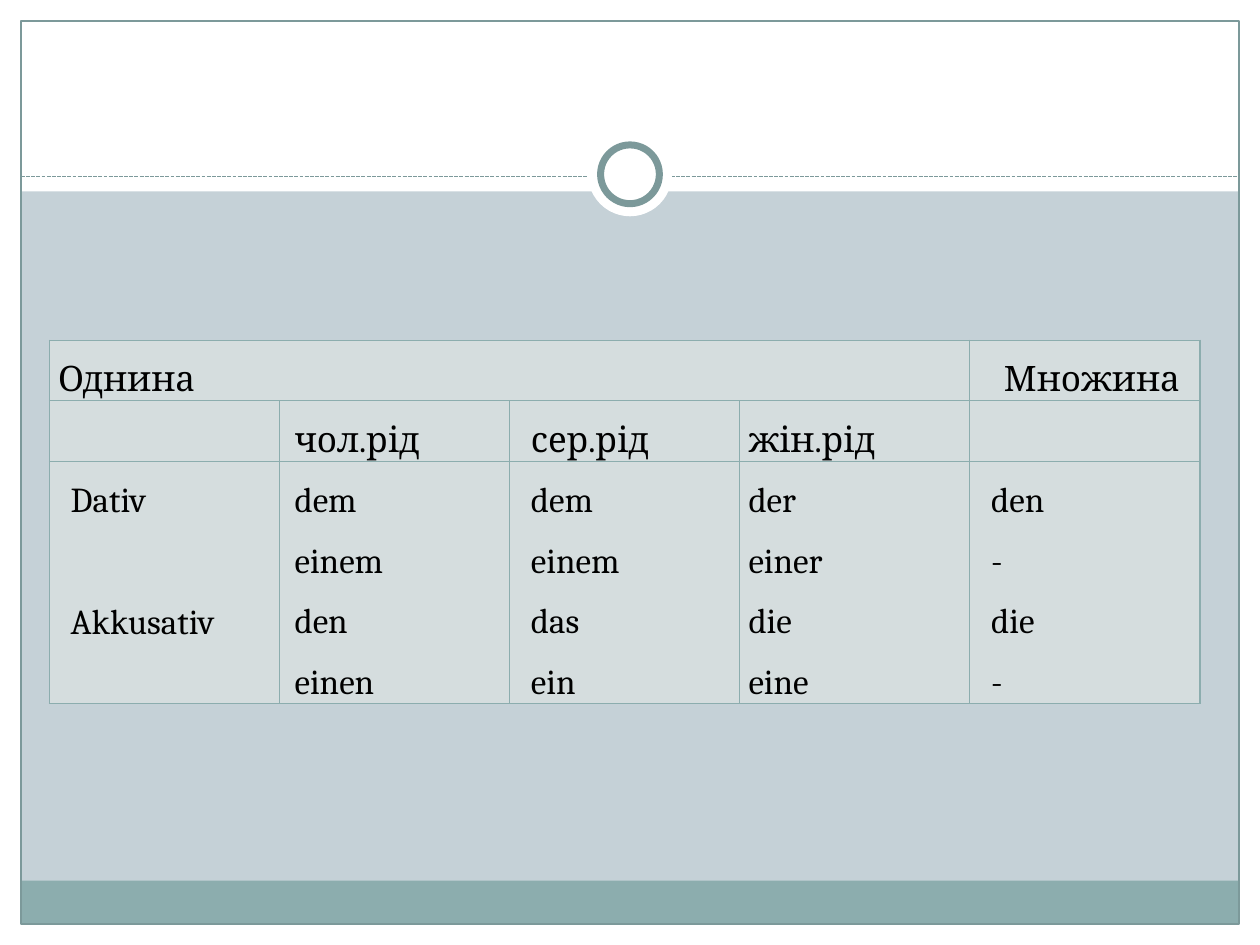
from lxml.etree import SubElement
from pptx import Presentation
from pptx.dml.color import RGBColor
from pptx.enum.dml import MSO_LINE
from pptx.enum.shapes import MSO_CONNECTOR, MSO_SHAPE
from pptx.enum.text import PP_ALIGN
from pptx.oxml import parse_xml
from pptx.oxml.ns import nsdecls, qn
from pptx.util import Inches, Pt

GRID_COLUMNS, GRID_ROWS = 60, 45
WHITE, TEAL, DARK_TEAL = "FFFFFF", "8CADAE", "7C999A"
BACKDROP, CELL, INK = "C5D1D7", "D5DDDE", "000000"
LINE_PITCH = 34.8


def color(value):
    return RGBColor.from_string(value)


class SlideBuilder:
    """Holds the style and the slide, measured on a 60 by 45 grid."""

    font_name = "Cambria"
    font_size = Pt(20)

    def __init__(self, presentation):
        self.width = presentation.slide_width
        self.height = presentation.slide_height
        self.slide = presentation.slides.add_slide(presentation.slide_layouts[6])

    def x(self, columns):
        return round(self.width * columns / GRID_COLUMNS)

    def y(self, rows):
        return round(self.height * rows / GRID_ROWS)

    def background(self, fill):
        self.slide.background.fill.solid()
        self.slide.background.fill.fore_color.rgb = color(fill)

    def shape(self, kind, left, top, width, height, fill=None, line=None, weight=0.75):
        shape = self.slide.shapes.add_shape(
            kind, self.x(left), self.y(top), self.x(width), self.y(height))
        shape.shadow.inherit = False
        if fill:
            shape.fill.solid()
            shape.fill.fore_color.rgb = color(fill)
        else:
            shape.fill.background()
        if line:
            shape.line.color.rgb = color(line)
            shape.line.width = Pt(weight)
        else:
            shape.line.fill.background()

    def dashed_line(self, left, right, row, line):
        rule = self.slide.shapes.add_connector(
            MSO_CONNECTOR.STRAIGHT, self.x(left), self.y(row), self.x(right), self.y(row))
        rule.line.color.rgb = color(line)
        rule.line.width = Pt(0.75)
        rule.line.dash_style = MSO_LINE.SQUARE_DOT
        SubElement(rule.element.spPr, qn("a:effectLst"))

    def table(self, left, top, width, row_heights, contents, indents):
        column_count = len(contents[0])
        frame = self.slide.shapes.add_table(
            len(contents), column_count, self.x(left), self.y(top),
            self.x(width), self.y(sum(row_heights)))
        table = frame.table
        for column in table.columns:
            column.width = self.x(width / column_count)
        for row, height in zip(table.rows, row_heights):
            row.height = self.y(height)
        for row, row_contents in enumerate(contents):
            for column, lines in enumerate(row_contents):
                self.cell(table.cell(row, column), lines, indents[row][column])
        return table

    def cell(self, cell, lines, indent):
        cell.fill.solid()
        cell.fill.fore_color.rgb = color(CELL)
        cell.margin_left = cell.margin_right = Inches(0.07)
        cell.margin_top = cell.margin_bottom = 0
        self.borders(cell)
        frame = cell.text_frame
        frame.text = "\n".join(line for line in lines if line)
        for paragraph in frame.paragraphs:
            paragraph.alignment = PP_ALIGN.JUSTIFY
            paragraph.line_spacing = 1.5
            paragraph.font.name = self.font_name
            paragraph.font.size = self.font_size
            paragraph.font.color.rgb = color(INK)
            properties = paragraph._p.get_or_add_pPr()
            properties.set("marL", str(Inches(indent)))
            properties.set("indent", "0")
        if "" in lines:
            frame.paragraphs[lines.index("")].space_before = Pt(LINE_PITCH)

    def borders(self, cell):
        properties = cell._tc.get_or_add_tcPr()
        for position, side in enumerate("LRTB"):
            properties.insert(position, parse_xml(
                f'<a:ln{side} {nsdecls("a")} w="{Pt(0.75)}"><a:solidFill>'
                f'<a:srgbClr val="{TEAL}"/></a:solidFill></a:ln{side}>'))


def main():
    presentation = Presentation()
    presentation.slide_width, presentation.slide_height = Inches(10), Inches(7.5)
    builder = SlideBuilder(presentation)
    builder.background(BACKDROP)

    bands = [
        (0, 44, 60, 1, WHITE),
        (0, 0, 60, 9.12, WHITE),
        (0, 0, 1, 45, WHITE),
        (59, 0, 1, 45, WHITE),
        (1, 41.94, 58, 2.06, TEAL),
    ]
    for band in bands:
        builder.shape(MSO_SHAPE.RECTANGLE, *band)
    builder.shape(MSO_SHAPE.RECTANGLE, 1, 1, 58, 43, line=DARK_TEAL)
    builder.dashed_line(1, 59, 8.4, DARK_TEAL)
    builder.shape(MSO_SHAPE.OVAL, 28, 6.3, 4, 4, WHITE)
    builder.shape(MSO_SHAPE.OVAL, 28.6, 6.9, 2.8, 2.8, WHITE, DARK_TEAL, 4)

    articles = [
        [["Однина"], [], [], [], ["Множина"]],
        [[], ["чол.рід"], ["сер.рід"], ["жін.рід"], []],
        [["Dativ", "", "Akkusativ"],
         ["dem", "einem", "den", "einen"],
         ["dem", "einem", "das", "ein"],
         ["der", "einer", "die", "eine"],
         ["den", "-", "die", "-"]],
    ]
    indents = [
        [0, 0, 0, 0, 0.2],
        [0, 0.05, 0.1, 0, 0],
        [0.1, 0.05, 0.1, 0, 0.1],
    ]
    declension = builder.table(2.35, 16.2, 54.8, [2.88, 2.88, 11.52], articles, indents)
    declension.cell(0, 0).merge(declension.cell(0, 3))

    presentation.save("out.pptx")


if __name__ == "__main__":
    main()
